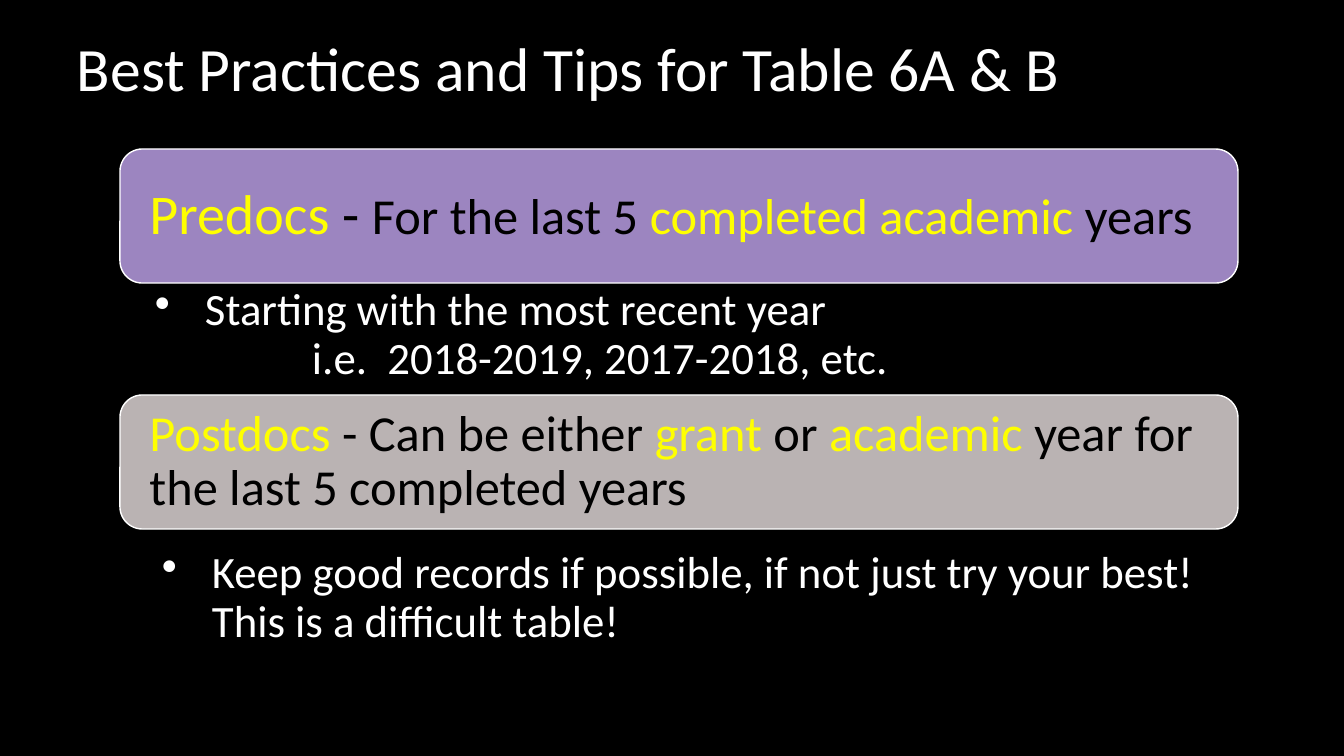
import pptx
import pptx.dml.color
import pptx.enum.shapes
import pptx.enum.text
import pptx.oxml
import pptx.oxml.ns
import pptx.util

PX = 914400 / 100.8
FONT = "Calibri"
COLORS = {
    "black": "000000",
    "white": "FFFFFF",
    "yellow": "FFFF00",
    "purple": "9C85C0",
    "gray": "BAB3B3",
}
BAR_LEFT, BAR_WIDTH, BAR_HEIGHT = 120, 1118, 134
HANG = 50


def px(n):
    """Turn a pixel length into EMU."""
    return pptx.util.Emu(round(n * PX))


def color(name):
    """Look up a named colour."""
    return pptx.dml.color.RGBColor.from_string(COLORS[name])


def set_frame(tf, insets, anchor):
    """Set wrapping, insets (left, top, right, bottom) and anchor."""
    tf.word_wrap = True
    tf.margin_left, tf.margin_top, tf.margin_right, tf.margin_bottom = map(px, insets)
    tf.vertical_anchor = anchor


def add_runs(p, runs):
    """Fill a left-aligned paragraph with (text, size, colour) runs."""
    p.alignment = pptx.enum.text.PP_ALIGN.LEFT
    p.line_spacing = 0.9
    for text, size, name in runs:
        r = p.add_run()
        r.text = text
        r.font.name = FONT
        r.font.size = pptx.util.Pt(size)
        r.font.color.rgb = color(name)


def add_text_box(s, left, top, width, height, insets, anchor):
    """Add a text box and return its text frame."""
    sp = s.shapes.add_textbox(px(left), px(top), px(width), px(height))
    set_frame(sp.text_frame, insets, anchor)
    return sp.text_frame


def add_title(s, text):
    """Add the slide title."""
    tf = add_text_box(s, 67, 28, 1210, 88, (10, 5, 10, 5), pptx.enum.text.MSO_ANCHOR.MIDDLE)
    add_runs(tf.paragraphs[0], [(text, 44, "white")])


def add_bar(s, top, fill, runs):
    """Add a rounded heading bar."""
    sp = s.shapes.add_shape(
        pptx.enum.shapes.MSO_SHAPE.ROUNDED_RECTANGLE,
        px(BAR_LEFT), px(top), px(BAR_WIDTH), px(BAR_HEIGHT),
    )
    sp.shadow.inherit = False
    sp.fill.solid()
    sp.fill.fore_color.rgb = color(fill)
    sp.line.color.rgb = color("white")
    sp.line.width = pptx.util.Pt(1)
    set_frame(sp.text_frame, (23, 23, 23, 23), pptx.enum.text.MSO_ANCHOR.MIDDLE)
    add_runs(sp.text_frame.paragraphs[0], runs)


def add_bullet(s, left, top, height, text, detail=None):
    """Add a bulleted tip with an optional indented detail line."""
    tf = add_text_box(s, left, top, BAR_WIDTH, height, (35, 4, 25, 4), pptx.enum.text.MSO_ANCHOR.TOP)
    p = tf.paragraphs[0]
    pPr = p._p.get_or_add_pPr()
    pPr.set("marL", str(px(HANG)))
    pPr.set("indent", str(px(-HANG)))
    bullet = pptx.oxml.parse_xml(f'<a:buChar {pptx.oxml.ns.nsdecls("a")} char="•"/>')
    pPr.append(bullet)
    add_runs(p, [(text, 32, "white")])
    if detail:
        p = tf.add_paragraph()
        p._p.get_or_add_pPr().set("marL", str(px(157)))
        add_runs(p, [(detail, 32, "white")])


def main():
    """Build and save the slide."""
    prs = pptx.Presentation()
    prs.slide_width, prs.slide_height = px(1344), px(756)
    s = prs.slides.add_slide(prs.slide_layouts[6])
    s.background.fill.solid()
    s.background.fill.fore_color.rgb = color("black")

    add_title(s, "Best Practices and Tips for Table 6A & B")
    add_bar(s, 149, "purple", [
        ("Predocs", 40, "yellow"),
        (" - ", 40, "black"),
        ("For the last 5 ", 36, "black"),
        ("completed academic", 36, "yellow"),
        (" years", 36, "black"),
    ])
    add_bullet(s, 120, 283, 112, "Starting with the most recent year",
               "i.e.  2018-2019, 2017-2018, etc.")
    add_bar(s, 395, "gray", [
        ("Postdocs", 36, "yellow"),
        (" - Can be either ", 36, "black"),
        ("grant", 36, "yellow"),
        (" or ", 36, "black"),
        ("academic", 36, "yellow"),
        (" year for the last 5 completed years", 36, "black"),
    ])
    add_bullet(s, 127, 546, 119,
               "Keep good records if possible, if not just try your best! This is a difficult table!")
    prs.save("out.pptx")


if __name__ == "__main__":
    main()
